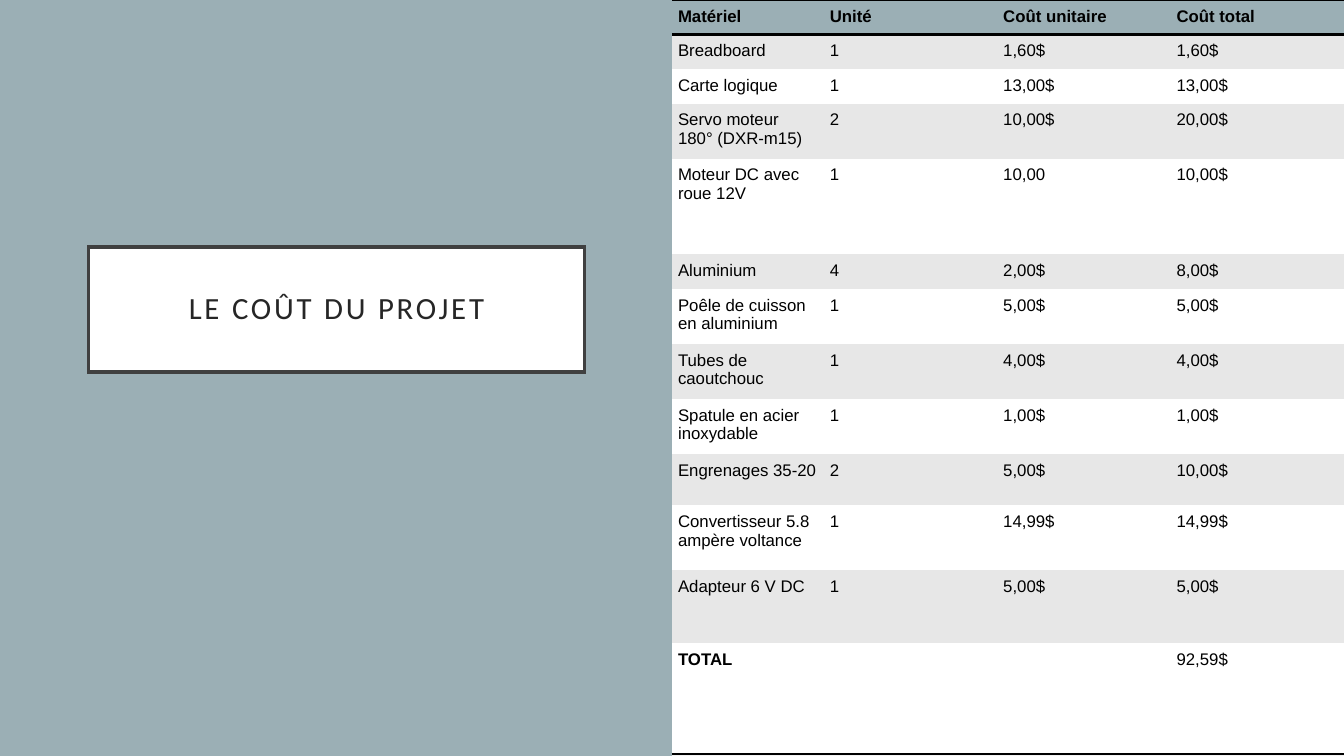
from lxml.etree import SubElement
from pptx import Presentation
from pptx.dml.color import RGBColor
from pptx.enum.shapes import MSO_SHAPE
from pptx.enum.text import MSO_ANCHOR, MSO_AUTO_SIZE, PP_ALIGN
from pptx.oxml.ns import qn
from pptx.util import Inches, Pt

TEAL = RGBColor(0x9B, 0xAF, 0xB5)
BAND = RGBColor(0xE7, 0xE7, 0xE7)
WHITE = RGBColor(0xFF, 0xFF, 0xFF)
PALE = RGBColor(0xF2, 0xF2, 0xF2)
BLACK = RGBColor(0, 0, 0)
DARK = RGBColor(0x26, 0x26, 0x26)
FRAME = RGBColor(0x40, 0x40, 0x40)

WIDE, HIGH = Inches(13.33), Inches(7.5)
NO_GRID = "{2D5ABB26-0587-4C30-8999-92F81FD0307C}"

# Row heights in percent of the slide: one line, two lines
ONE, TWO = 4.57, 7.28
COLS = [11.3, 12.9, 12.9, 12.9]
COSTS = [
    (ONE, "Matériel", "Unité", "Coût unitaire", "Coût total"),
    (ONE, "Breadboard", "1", "1,60$", "1,60$"),
    (ONE, "Carte logique", "1", "13,00$", "13,00$"),
    (TWO, "Servo moteur 180° (DXR-m15)", "2", "10,00$", "20,00$"),
    (12.65, "Moteur DC avec roue 12V", "1", "10,00", "10,00$"),
    (ONE, "Aluminium", "4", "2,00$", "8,00$"),
    (TWO, "Poêle de cuisson en aluminium", "1", "5,00$", "5,00$"),
    (TWO, "Tubes de caoutchouc", "1", "4,00$", "4,00$"),
    (TWO, "Spatule en acier inoxydable", "1", "1,00$", "1,00$"),
    (6.8, "Engrenages 35-20", "2", "5,00$", "10,00$"),
    (8.6, "Convertisseur 5.8 ampère voltance", "1", "14,99$", "14,99$"),
    (9.65, "Adapteur 6 V DC", "1", "5,00$", "5,00$"),
    (14.7, "TOTAL", "", "", "92,59$"),
]


def across(share):
    return round(WIDE * share / 100)


def down(share):
    return round(HIGH * share / 100)


def write(frame, text, font="Arial", size=12, color=BLACK, bold=False,
          align=PP_ALIGN.LEFT, lines=1.0, space=0):
    par = frame.paragraphs[0]
    par.alignment = align
    par.line_spacing = lines
    if not text:
        par.font.size = Pt(size)
        return
    run = par.add_run()
    run.text = text
    run.font.name = font
    run.font.size = Pt(size)
    run.font.bold = bold
    run.font.color.rgb = color
    if space:
        run.font._element.set("spc", str(space * 100))


class Deck:
    """Slide with places given in percent of its width and height."""

    def __init__(self):
        self.show = Presentation()
        self.show.slide_width, self.show.slide_height = WIDE, HIGH
        self.slide = self.show.slides.add_slide(self.show.slide_layouts[5])
        fill = self.slide.background.fill
        fill.solid()
        fill.fore_color.rgb = PALE

    def panel(self, x, y, w, h, color):
        box = self.slide.shapes.add_shape(
            MSO_SHAPE.RECTANGLE, across(x), down(y), across(w), down(h))
        box.shadow.inherit = False
        box.fill.solid()
        box.fill.fore_color.rgb = color
        box.line.fill.background()
        # The title stays in front of the panel
        box._element.addnext(self.slide.shapes.title._element)

    def title(self, x, y, w, h, text):
        box = self.slide.shapes.title
        box.left, box.top = across(x), down(y)
        box.width, box.height = across(w), down(h)
        box.fill.solid()
        box.fill.fore_color.rgb = WHITE
        box.line.color.rgb = FRAME
        box.line.width = Pt(2.5)
        # Square corners
        SubElement(box._element.spPr.find(qn("a:ln")), qn("a:miter"),
                   lim="800000")
        frame = box.text_frame
        frame.word_wrap = True
        frame.auto_size = MSO_AUTO_SIZE.NONE
        frame.vertical_anchor = MSO_ANCHOR.MIDDLE
        frame.margin_left = frame.margin_right = Inches(0.2)
        frame.margin_top = frame.margin_bottom = Inches(0.2)
        write(frame, text, font="Calibri", size=22, color=DARK,
              align=PP_ALIGN.CENTER, lines=0.9, space=2)

    def rule(self, cell, side):
        line = SubElement(cell._tc.get_or_add_tcPr(), qn(f"a:ln{side}"),
                          w=str(Pt(2)))
        fill = SubElement(line, qn("a:solidFill"))
        SubElement(fill, qn("a:srgbClr"), val=str(BLACK))

    def cell(self, cell, text, color, sides, bold):
        for side in sides:
            self.rule(cell, side)
        cell.fill.solid()
        cell.fill.fore_color.rgb = color
        cell.margin_left = cell.margin_right = Inches(0.06)
        cell.margin_top = cell.margin_bottom = Inches(0.07)
        write(cell.text_frame, text, bold=bold)

    def table(self, x, y, cols, rows):
        high = sum(row[0] for row in rows)
        grid = self.slide.shapes.add_table(
            len(rows), len(cols), across(x), down(y),
            across(sum(cols)), down(high)).table
        grid._tbl.tblPr.find(qn("a:tableStyleId")).text = NO_GRID
        for col, width in zip(grid.columns, cols):
            col.width = across(width)
        last = len(rows) - 1
        for r, (height, *texts) in enumerate(rows):
            grid.rows[r].height = down(height)
            color = TEAL if r == 0 else BAND if r % 2 else WHITE
            sides = {0: "TB", last: "B"}.get(r, "")
            for c, text in enumerate(texts):
                bold = r == 0 or (r == last and c == 0)
                self.cell(grid.cell(r, c), text, color, sides, bold)


def main():
    deck = Deck()
    # Left half
    deck.panel(0, 0, 50, 100, TEAL)
    deck.title(6.6, 32.7, 36.9, 16.5, "LE COÛT DU PROJET")
    # Right half
    deck.table(50, 0, COLS, COSTS)
    deck.show.save("out.pptx")


if __name__ == "__main__":
    main()
